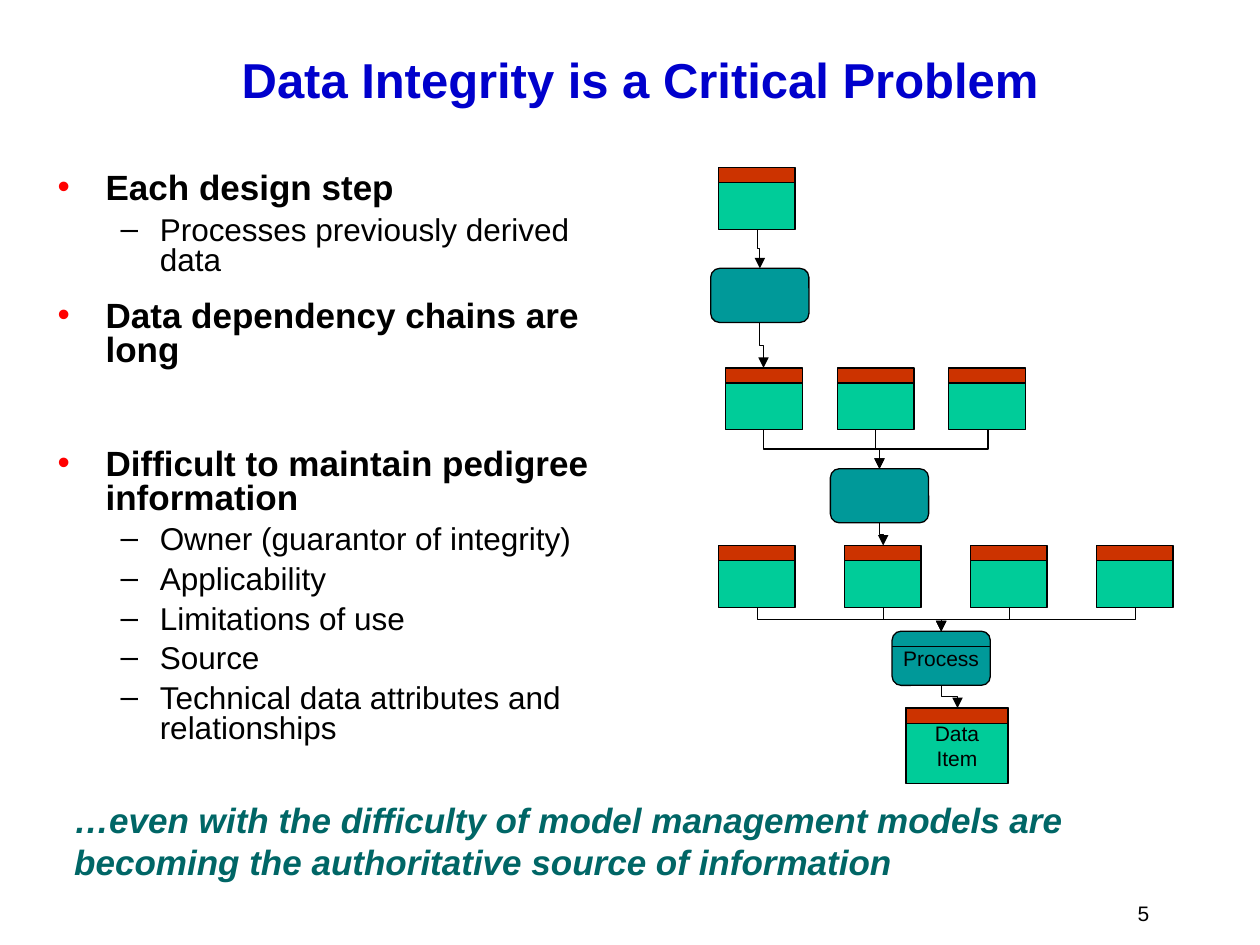
from lxml import etree
from pptx import Presentation, util as u
from pptx.dml.color import RGBColor
from pptx.enum import shapes, text
from pptx.oxml.ns import qn

BLACK = RGBColor(0x00, 0x00, 0x00)
BLUE = RGBColor(0x00, 0x00, 0xCC)
RED = RGBColor(0xFF, 0x00, 0x00)
DARK_TEAL = RGBColor(0x00, 0x66, 0x66)
TEAL = RGBColor(0x00, 0x99, 0x99)
GREEN = RGBColor(0x00, 0xCC, 0x99)
RUST = RGBColor(0xCC, 0x33, 0x00)

presentation = Presentation()
presentation.slide_width, presentation.slide_height = u.Inches(10), u.Inches(7.5)
column = presentation.slide_width // 100
row = presentation.slide_height // 75
slide = presentation.slides.add_slide(presentation.slide_layouts[6])


def add_text(holder, lines, size, color, bold=False, italic=False, alignment=None):
    frame = holder.text_frame
    frame.text = "\n".join(lines)
    for paragraph in frame.paragraphs:
        paragraph.alignment = alignment
        font = paragraph.font
        font.name, font.size, font.bold, font.italic = "Arial", u.Pt(size), bold, italic
        font.color.rgb = color
    return frame


def add_box(kind, left, top, width, height, fill):
    shape = slide.shapes.add_shape(
        kind, int(left * column), int(top * row), int(width * column), int(height * row))
    shape.shadow.inherit = False
    shape.fill.solid()
    shape.fill.fore_color.rgb = fill
    shape.line.color.rgb = BLACK
    shape.line.width = u.Pt(0.75)
    return shape


text_areas = [
    (5.8, 2.3, 90, 8.5, ["Data Integrity is a Critical Problem"], 28, BLUE, True, False,
     text.PP_ALIGN.CENTER),
    (4.9, 62.9, 92.2, 7.7,
     ["…even with the difficulty of model management models are becoming "
      "the authoritative source of information"], 20, DARK_TEAL, True, True, None),
    (89.3, 71, 5.7, 4, ["5"], 12, BLACK, False, False, None),
]
for left, top, width, height, *content in text_areas:
    box = slide.shapes.add_textbox(
        int(left * column), int(top * row), int(width * column), int(height * row))
    frame = add_text(box, *content)
    frame.word_wrap = True
    if content[1] == 28:
        frame.vertical_anchor = text.MSO_ANCHOR.MIDDLE
        frame.paragraphs[0].line_spacing = 0.9

points = [
    (0, 0, "Each design step"),
    (1, 5.4, "Processes previously derived data"),
    (0, 14, "Data dependency chains are long"),
    (0, 46, "Difficult to maintain pedigree information"),
    (1, 5.4, "Owner (guarantor of integrity)"),
    (1, 5.4, "Applicability"),
    (1, 5.4, "Limitations of use"),
    (1, 5.4, "Source"),
    (1, 5.4, "Technical data attributes and relationships"),
]
body = slide.shapes.add_textbox(
    int(3.6 * column), int(13.3 * row), int(48.1 * column), int(50.1 * row))
frame = add_text(body, [words for _, _, words in points], 20, BLACK)
frame.word_wrap = True
for paragraph, (level, space, _) in zip(frame.paragraphs, points):
    paragraph.level = level
    paragraph.line_spacing = 0.8
    paragraph.space_before = u.Pt(space)
    paragraph.font.size = u.Pt((20, 18)[level])
    paragraph.font.bold = level == 0
    properties = paragraph._p.get_or_add_pPr()
    properties.set("marL", str(u.Inches((0.38, 0.81)[level])))
    properties.set("indent", str(u.Inches((-0.38, -0.31)[level])))
    bullet_color = etree.Element(qn("a:buClr"))
    etree.SubElement(bullet_color, qn("a:srgbClr")).set("val", str((RED, BLACK)[level]))
    bullet_font = etree.Element(qn("a:buFont"))
    bullet_font.set("typeface", "Arial")
    bullet = etree.Element(qn("a:buChar"))
    bullet.set("char", "•–"[level])
    position = list(properties).index(properties.find(qn("a:defRPr")))
    properties[position:position] = [bullet_color, bullet_font, bullet]

item_rows = [(13.3, [57]), (29.2, [57.6, 66.45, 75.3]), (43.3, [57, 67, 77, 87])]
for top, lefts in item_rows:
    for left in lefts:
        add_box(shapes.MSO_SHAPE.RECTANGLE, left, top + 0.6, 6.1, 4.3, GREEN)
        add_box(shapes.MSO_SHAPE.RECTANGLE, left, top, 6.1, 1.2, RUST)

processes = [(56.4, 21.3, []), (65.9, 37.2, []), (70.8, 50.1, ["Process"])]
for left, top, words in processes:
    process = add_box(shapes.MSO_SHAPE.ROUNDED_RECTANGLE, left, top, 7.8, 4.3, TEAL)
    add_text(process, words, 12, BLACK, alignment=text.PP_ALIGN.CENTER).word_wrap = False

data_item = add_box(shapes.MSO_SHAPE.RECTANGLE, 71.9, 56.2, 8.1, 6, GREEN)
add_text(data_item, ["Data", "Item"], 12, BLACK,
         alignment=text.PP_ALIGN.CENTER).word_wrap = False
add_box(shapes.MSO_SHAPE.RECTANGLE, 71.9, 56.2, 8.1, 1.2, RUST)

flows = [
    ([60.1], 18.2, 60.3, 21.3),
    ([60.3], 25.6, 60.6, 29.2),
    ([60.6, 69.5, 78.4], 34.1, 69.8, 37.2),
    ([69.8], 41.5, 70.1, 43.3),
    ([60.1, 70.1, 80.1, 90.1], 48.2, 74.7, 50.1),
    ([74.7], 54.4, 76, 56.2),
]
connectors = []
for starts, start_y, end_x, end_y in flows:
    for start_x in starts:
        drop = (end_y - start_y) * row
        shift = abs(end_x - start_x) * column
        middle_x = (start_x + end_x) / 2 * column
        middle_y = (start_y + end_y) / 2 * row
        flow = slide.shapes.add_connector(
            shapes.MSO_CONNECTOR.ELBOW,
            int(middle_x - drop / 2), int(middle_y - shift / 2),
            int(middle_x + drop / 2), int(middle_y + shift / 2))
        transform = flow._element.spPr.find(qn("a:xfrm"))
        rightward = end_x > start_x
        transform.set("rot", str((270 if rightward else 90) * 60000))
        transform.set("flipH", "1" if rightward else "0")
        connectors.append((flow, True))

divider = slide.shapes.add_connector(
    shapes.MSO_CONNECTOR.STRAIGHT,
    int(70.8 * column), int(51.3 * row), int(78.6 * column), int(51.3 * row))
connectors.append((divider, False))

for connector, has_arrow in connectors:
    connector.line.color.rgb = BLACK
    connector.line.width = u.Pt(0.75)
    if has_arrow:
        arrow = etree.SubElement(connector.line._get_or_add_ln(), qn("a:tailEnd"))
        arrow.set("type", "triangle")
    etree.SubElement(connector._element.spPr, qn("a:effectLst"))

presentation.save("out.pptx")
